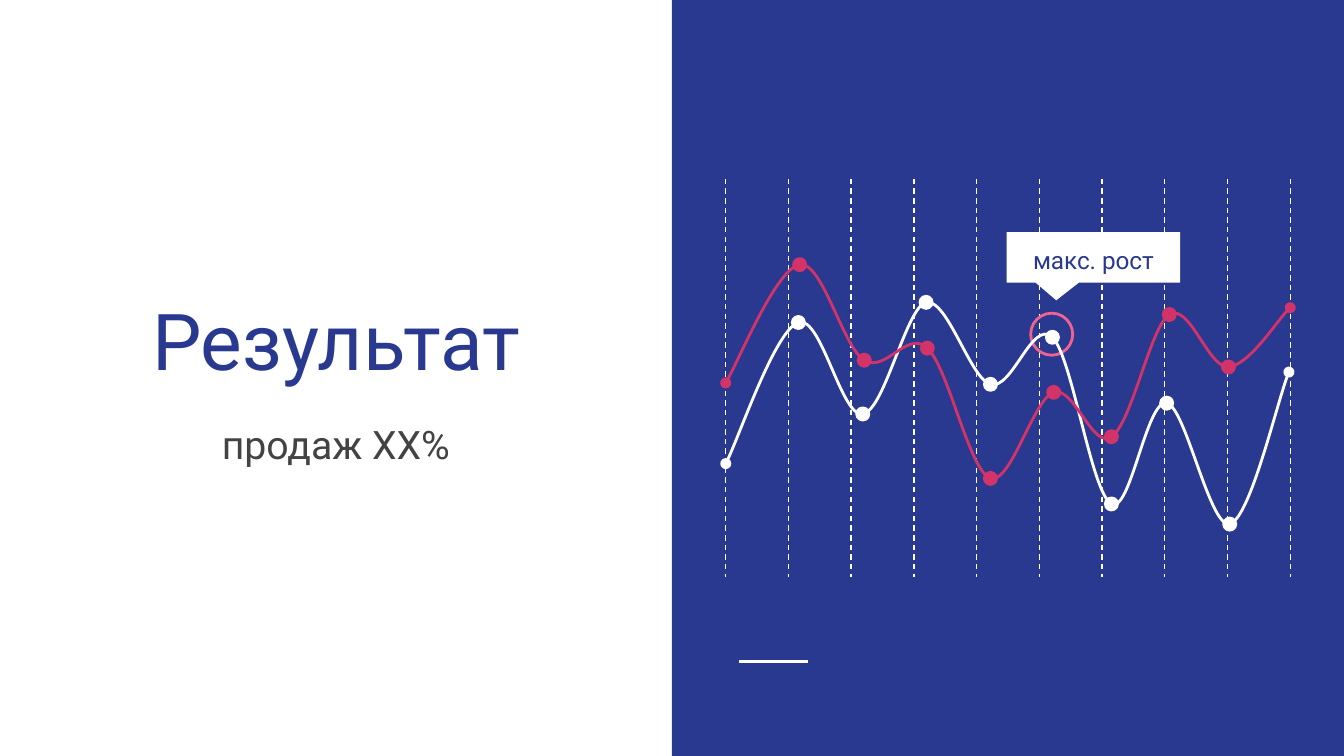
"""Build a split slide with a sales result and a two-line growth graph."""
from lxml.etree import SubElement
from pptx import Presentation
from pptx.dml.color import RGBColor
from pptx.enum.dml import MSO_LINE
from pptx.enum.shapes import MSO_CONNECTOR, MSO_SHAPE
from pptx.enum.text import MSO_ANCHOR, PP_ALIGN
from pptx.oxml.ns import qn
from pptx.util import Pt

BLUE = RGBColor(0x2A, 0x39, 0x90)
WHITE = RGBColor(0xFF, 0xFF, 0xFF)
GREY = RGBColor(0x43, 0x43, 0x43)
RED = RGBColor(0xD2, 0x33, 0x69)
PINK = RGBColor(0xF0, 0x62, 0x92)
DOT = 6.5

WHITE_CURVE = [
    (388.8, 248.4),
    (395.3, 236.2), (415.4, 177.1), (427.7, 172.8),
    (439.9, 168.5), (450.7, 223.9), (462.2, 221.8),
    (473.8, 220.3), (485.3, 164.9), (496.1, 162),
    (507.6, 159.8), (519.8, 203), (530.6, 205.9),
    (542.2, 209.5), (553, 170.6), (563.8, 180.7),
    (574.6, 191.5), (584.6, 264.2), (595.4, 270),
    (605.5, 275.8), (614.2, 213.8), (625, 216),
    (635, 217.4), (648, 283), (658.8, 280.8),
    (669.6, 277.9), (684.7, 213.1), (690.5, 199.4),
]
RED_CURVE = [
    (388.8, 205.2),
    (395.3, 194.4), (416.2, 144), (428.4, 141.8),
    (440.6, 139.7), (451.4, 185.8), (463, 193),
    (474.5, 200.2), (486, 176.4), (496.8, 186.5),
    (508.3, 197.3), (519.1, 252), (530.6, 256.3),
    (541.4, 259.9), (553.7, 213.8), (564.5, 210.2),
    (575.3, 206.6), (585.4, 241.2), (595.4, 234),
    (606.2, 227.5), (616.3, 175), (626.4, 168.5),
    (637.2, 162), (647.3, 197.3), (658.1, 196.6),
    (668.9, 195.8), (685.4, 169.9), (691.2, 164.9),
]

prs = Presentation()
prs.slide_width, prs.slide_height = Pt(720), Pt(405)
s = prs.slides.add_slide(prs.slide_layouts[6])


def add_shape(kind, x, y, w, h, fill=None, line=None):
    sp = s.shapes.add_shape(kind, Pt(x), Pt(y), Pt(w), Pt(h))
    sp.shadow.inherit = False
    if fill is None:
        sp.fill.background()
    else:
        sp.fill.solid()
        sp.fill.fore_color.rgb = fill
    if line is None:
        sp.line.fill.background()
    else:
        sp.line.color.rgb = line
        sp.line.width = Pt(1.5)
    return sp


def add_line(x1, y1, x2, y2, width):
    ln = s.shapes.add_connector(MSO_CONNECTOR.STRAIGHT, Pt(x1), Pt(y1), Pt(x2), Pt(y2))
    ln.line.color.rgb = WHITE
    ln.line.width = Pt(width)
    SubElement(ln._element.spPr, qn("a:effectLst"))
    return ln


add_shape(MSO_SHAPE.RECTANGLE, 360, 0, 360, 405, BLUE)
add_line(396, 354.2, 432.7, 354.2, 1.5)
for i in range(10):
    x = 388.8 + 33.6 * i
    add_line(x, 95.8, x, 308.9, 0.75).line.dash_style = MSO_LINE.DASH

add_shape(MSO_SHAPE.OVAL, 552.2, 167.8, 22.5, 22.5, line=PINK)
callout = add_shape(MSO_SHAPE.ROUNDED_RECTANGULAR_CALLOUT, 539.3, 124.4, 92.9, 27, WHITE)
for i, value in enumerate((-0.214, 0.85, 0)):
    callout.adjustments[i] = value

for points, color in ((WHITE_CURVE, WHITE), (RED_CURVE, RED)):
    start, *rest = [(Pt(x), Pt(y)) for x, y in points]
    builder = s.shapes.build_freeform(*start)
    builder.add_line_segments(rest, close=False)
    curve = builder.convert_to_shape()
    curve.shadow.inherit = False
    curve.fill.background()
    curve.line.color.rgb = color
    curve.line.width = Pt(1.5)
    path = curve._element.find(".//" + qn("a:path"))
    segments = path.findall(qn("a:lnTo"))
    for i in range(0, len(segments), 3):
        bezier = SubElement(path, qn("a:cubicBezTo"))
        for segment in segments[i:i + 3]:
            bezier.append(segment[0])
            path.remove(segment)
    ln = curve._element.spPr.find(qn("a:ln"))
    for end in ("a:headEnd", "a:tailEnd"):
        SubElement(ln, qn(end), type="oval")
    for x, y in points[3:-1:3]:
        add_shape(MSO_SHAPE.OVAL, x - DOT / 2, y - DOT / 2, DOT, DOT, color, color)

for text, x, y, w, h, size, color, anchor, spacing in (
    ("Результат", 20.9, 90.7, 318.2, 123.1, 42, BLUE, MSO_ANCHOR.BOTTOM, 1),
    ("продаж XX%", 20.9, 218.2, 318.2, 100.1, 21, GREY, MSO_ANCHOR.TOP, 1),
    ("макс. рост", 539.3, 126.7, 92.9, 22.3, 13, BLUE, MSO_ANCHOR.MIDDLE, 1.15),
):
    tf = s.shapes.add_textbox(Pt(x), Pt(y), Pt(w), Pt(h)).text_frame
    tf.word_wrap = True
    tf.vertical_anchor = anchor
    tf.margin_left = tf.margin_right = tf.margin_top = tf.margin_bottom = Pt(7.2)
    tf.text = text
    p = tf.paragraphs[0]
    p.alignment = PP_ALIGN.CENTER
    p.line_spacing = spacing
    r = p.runs[0]
    r.font.name = "Roboto"
    r.font.size = Pt(size)
    r.font.color.rgb = color

prs.save("out.pptx")
